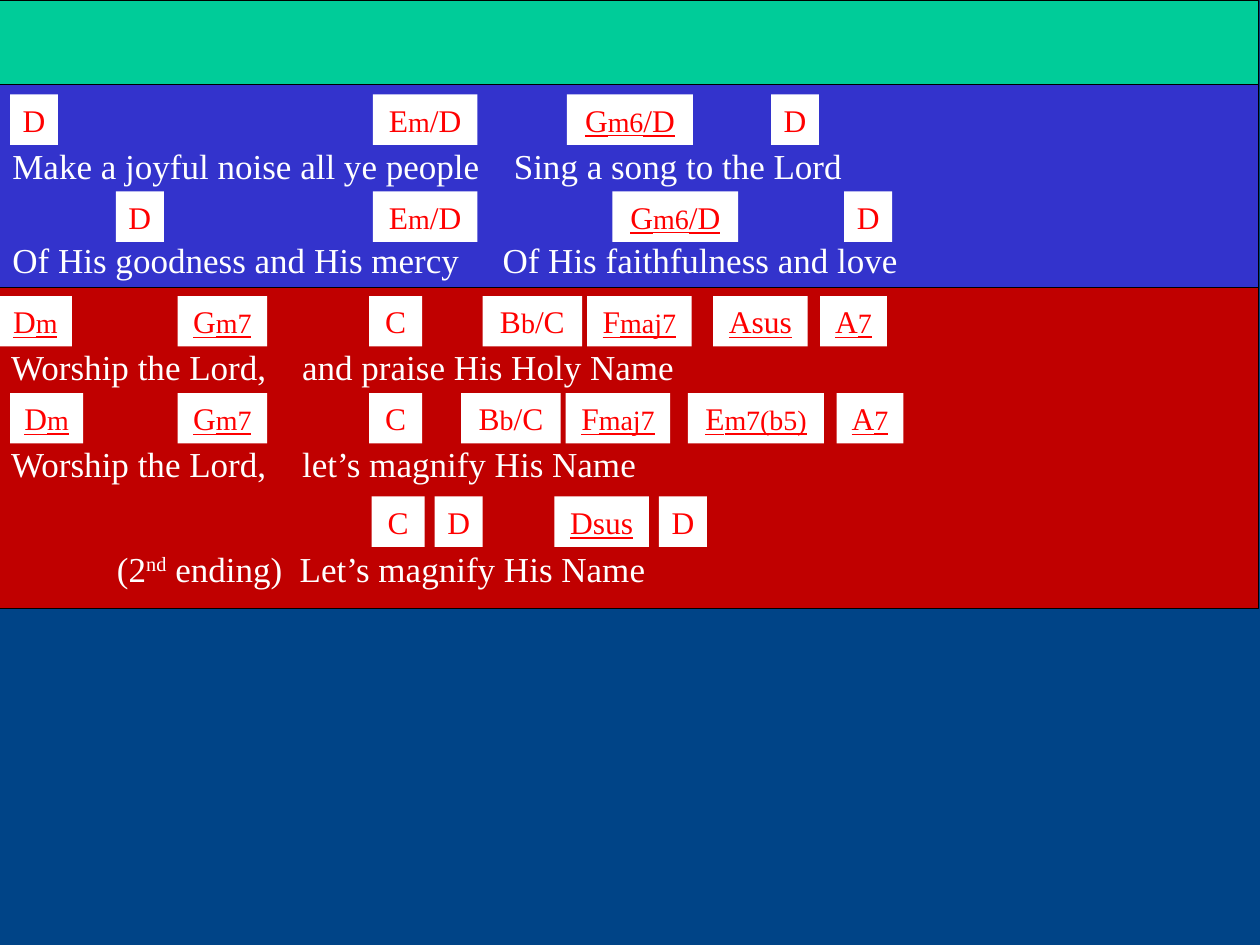
from lxml.etree import SubElement
from pptx import Presentation
from pptx.dml.color import RGBColor
from pptx.enum.shapes import MSO_SHAPE
from pptx.enum.text import MSO_ANCHOR, PP_ALIGN
from pptx.oxml.ns import qn
from pptx.util import Inches, Pt

FONT = "Times New Roman"
LEFT = -0.01
BANDS = [
    (2.27, 2.56, "C00000"),
    (0.67, 1.61, "3333CC"),
    (0, 0.67, "00CC99"),
]
LYRICS = [
    (0, 1.09, [3.98], ["Make a joyful noise all ye people\tSing a song to the Lord"]),
    (0, 1.84, [3.89], ["Of His goodness and His mercy\tOf His faithfulness and love"]),
    (LEFT, 2.69, [2.31], ["Worship the Lord,\tand praise His Holy Name"]),
    (LEFT, 3.46, [2.31], ["Worship the Lord,\tlet’s magnify His Name"]),
    (LEFT, 4.29, [0.84, 2.29], ["\t(2", "nd", " ending)\tLet’s magnify His Name"]),
]
CHORDS = {
    "D": (0.38, False, ["D"]),
    "C": (0.42, False, ["C"]),
    "Em/D": (0.83, False, ["E", "m", "/D"]),
    "Bb/C": (0.79, False, ["B", "b", "/C"]),
    "Gm6/D": (1, True, ["G", "m6", "/D"]),
    "Dm": (0.58, True, ["D", "m"]),
    "Gm7": (0.71, True, ["G", "m7"]),
    "Fmaj7": (0.83, True, ["F", "maj7"]),
    "Em7(b5)": (1.08, True, ["E", "m7(b5)"]),
    "A7": (0.53, True, ["A", "7"]),
    "Asus": (0.75, True, ["Asus"]),
    "Dsus": (0.75, True, ["Dsus"]),
}
CHORD_ROWS = [
    (0.75, [("D", 0.08), ("Em/D", 2.96), ("Gm6/D", 4.5), ("D", 6.12)]),
    (1.52, [("D", 0.92), ("Em/D", 2.96), ("Gm6/D", 4.86), ("D", 6.7)]),
    (2.35, [("Dm", LEFT), ("Gm7", 1.41), ("C", 2.93), ("Bb/C", 3.83),
            ("Fmaj7", 4.66), ("Asus", 5.66), ("A7", 6.51)]),
    (3.12, [("Dm", 0.08), ("Gm7", 1.41), ("C", 2.93), ("Bb/C", 3.66),
            ("Fmaj7", 4.49), ("Em7(b5)", 5.46), ("A7", 6.64)]),
    (3.94, [("C", 2.95), ("D", 3.45), ("Dsus", 4.4), ("D", 5.23)]),
]


def color(value):
    return RGBColor.from_string(value)


def add_rectangle(page, left, top, width, height, fill):
    box = page.shapes.add_shape(
        MSO_SHAPE.RECTANGLE, Inches(left), Inches(top), Inches(width), Inches(height)
    )
    box.shadow.inherit = False
    box.fill.solid()
    box.fill.fore_color.rgb = color(fill)
    return box


def add_band(page, top, height, fill):
    band = add_rectangle(page, LEFT, top, 10, height, fill)
    band.line.color.rgb = color("000000")
    band.line.width = Pt(0.75)


def style_paragraph(para, size, font_color):
    para.font.name = FONT
    para.font.size = Pt(size)
    para.font.color.rgb = color(font_color)


def add_tab_stops(para, stops):
    tabs = SubElement(para._p.get_or_add_pPr(), qn("a:tabLst"))
    for stop in stops:
        SubElement(tabs, qn("a:tab"), pos=str(Inches(stop)), algn="l")


def add_lyric(page, left, top, stops, parts):
    box = page.shapes.add_textbox(Inches(left), Inches(top), Inches(10), Inches(0.44))
    box.text_frame.word_wrap = True
    box.text_frame.vertical_anchor = MSO_ANCHOR.MIDDLE
    para = box.text_frame.paragraphs[0]
    add_tab_stops(para, stops)
    style_paragraph(para, 20, "FFFFFF")
    for index, text in enumerate(parts):
        span = para.add_run()
        span.text = text
        if index == 1:
            span.font._element.set("baseline", "30000")


def add_chord(page, name, left, top):
    width, underlined, parts = CHORDS[name]
    box = add_rectangle(page, left, top, width, 0.4, "FFFFFF")
    box.line.fill.background()
    box.text_frame.word_wrap = False
    box.text_frame.vertical_anchor = MSO_ANCHOR.MIDDLE
    para = box.text_frame.paragraphs[0]
    para.alignment = PP_ALIGN.CENTER
    style_paragraph(para, 18, "FF0000")
    para.font.underline = underlined
    for index, text in enumerate(parts):
        span = para.add_run()
        span.text = text
        if index == 1:
            span.font.size = Pt(16)


def main():
    deck = Presentation()
    deck.slide_width = Inches(10)
    deck.slide_height = Inches(7.5)
    page = deck.slides.add_slide(deck.slide_layouts[6])
    page.background.fill.solid()
    page.background.fill.fore_color.rgb = color("004487")
    for band in BANDS:
        add_band(page, *band)
    for lyric in LYRICS:
        add_lyric(page, *lyric)
    for top, chords in CHORD_ROWS:
        for name, left in chords:
            add_chord(page, name, left, top)
    deck.save("out.pptx")


if __name__ == "__main__":
    main()
